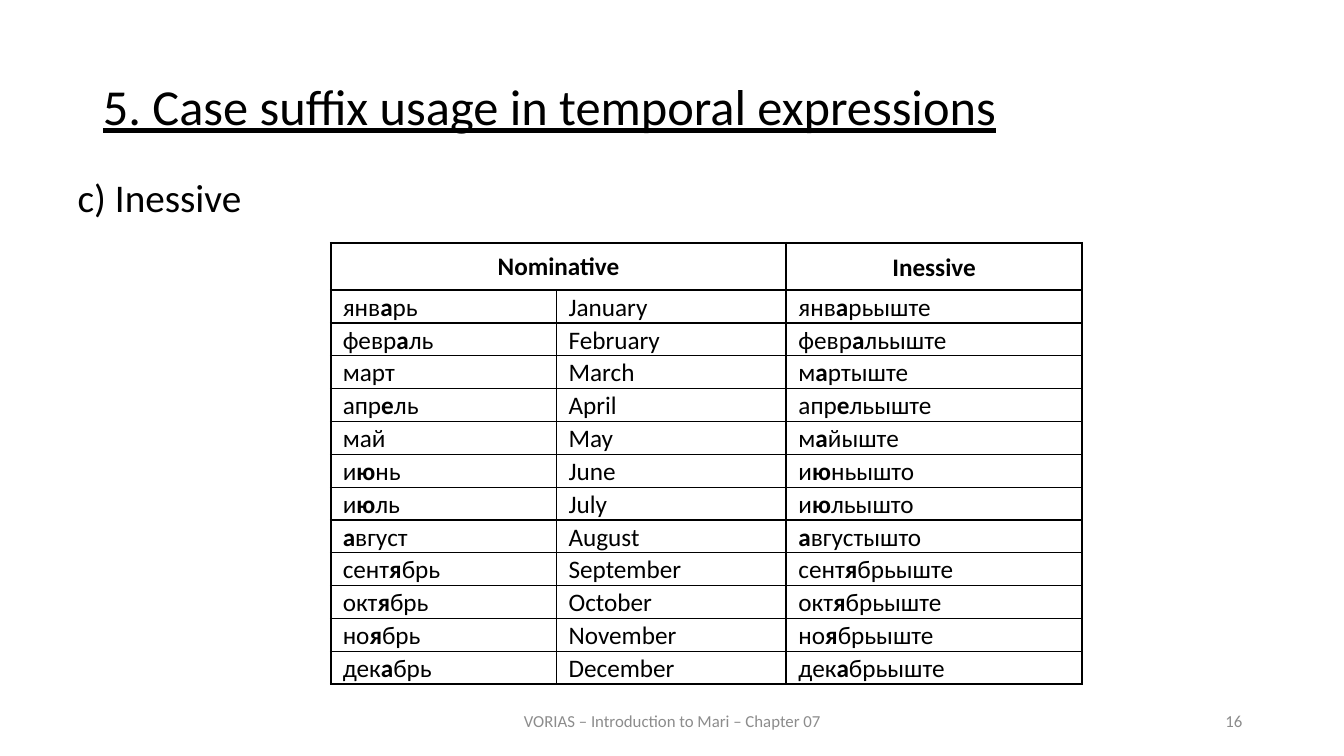
from lxml import etree
from pptx import Presentation
from pptx import util as u
from pptx.dml.color import RGBColor
from pptx.enum import text
from pptx.oxml.ns import qn

COLOURS = {"ink": "000000", "footer": "8C8C8C"}
FONT = "Calibri"
ALIGN = text.PP_ALIGN
MIDDLE = text.MSO_ANCHOR.MIDDLE
THICK, THIN = 1.5, 1
COLUMN_WIDTHS = (2.24, 2.28, 2.93)
HEADER_HEIGHT = 0.47
MONTHS = [
    ("янв*а*рь", "January", "янв*а*рьыште"),
    ("февр*а*ль", "February", "февр*а*льыште"),
    ("март", "March", "м*а*ртыште"),
    ("апр*е*ль", "April", "апр*е*льыште"),
    ("май", "May", "м*а*йыште"),
    ("и*ю*нь", "June", "и*ю*ньышто"),
    ("и*ю*ль", "July", "и*ю*льышто"),
    ("*а*вгуст", "August", "*а*вгустышто"),
    ("сент*я*брь", "September", "сент*я*брьыште"),
    ("окт*я*брь", "October", "окт*я*брьыште"),
    ("но*я*брь", "November", "но*я*брьыште"),
    ("дек*а*брь", "December", "дек*а*брьыште"),
]


def style(paragraph, size, colour="ink", align=ALIGN.LEFT):
    """Set the font and alignment of a whole paragraph."""
    paragraph.alignment = align
    paragraph.font.name = FONT
    paragraph.font.size = u.Pt(size)
    paragraph.font.color.rgb = RGBColor.from_string(COLOURS[colour])


def fill_placeholder(shape, box, wording, size, align=ALIGN.LEFT):
    """Move a placeholder to its box, write it and return its paragraph."""
    shape.left, shape.top, shape.width, shape.height = map(u.Inches, box)
    frame = shape.text_frame
    frame.text = wording
    frame.word_wrap = True
    frame.auto_size = text.MSO_AUTO_SIZE.NONE
    frame.vertical_anchor = text.MSO_ANCHOR.TOP
    paragraph = frame.paragraphs[0]
    style(paragraph, size, align=align)
    return paragraph


def add_title(slide, box):
    """Write the underlined slide title."""
    paragraph = fill_placeholder(
        slide.shapes.title, box,
        "5. Case suffix usage in temporal expressions", 36, ALIGN.JUSTIFY)
    paragraph.font.underline = True
    paragraph.line_spacing = 0.9
    paragraph.space_before = u.Pt(12)


def add_subheading(slide, box):
    """Write the case name as a body line without a bullet."""
    paragraph = fill_placeholder(slide.placeholders[1], box, "c) Inessive", 28)
    paragraph.space_before = u.Pt(0)
    properties = paragraph._p.get_or_add_pPr()
    properties.set("marL", "0")
    properties.set("indent", "0")
    etree.SubElement(properties, qn("a:buNone"))


def add_footer(slide, box, wording, align):
    """Write one grey footer item."""
    frame = slide.shapes.add_textbox(*map(u.Inches, box)).text_frame
    frame.word_wrap = True
    frame.vertical_anchor = MIDDLE
    frame.text = wording
    style(frame.paragraphs[0], 12, "footer", align)


def set_borders(cell, left, right, top, bottom):
    """Draw the four borders of a cell with the given widths in points."""
    properties = cell._tc.get_or_add_tcPr()
    widths = {"a:lnL": left, "a:lnR": right, "a:lnT": top, "a:lnB": bottom}
    for place, (tag, width) in enumerate(widths.items()):
        line = etree.Element(qn(tag), w=str(u.Pt(width)))
        fill = etree.SubElement(line, qn("a:solidFill"))
        etree.SubElement(fill, qn("a:srgbClr"), val=COLOURS["ink"])
        properties.insert(place, line)


def write_cell(cell, wording, align, margins=(0.12, 0.02, 0.12, 0)):
    """Write a cell, with the parts between asterisks in bold."""
    (cell.margin_left, cell.margin_top,
     cell.margin_right, cell.margin_bottom) = map(u.Inches, margins)
    cell.vertical_anchor = MIDDLE
    paragraph = cell.text_frame.paragraphs[0]
    style(paragraph, 18, align=align)
    for place, part in enumerate(wording.split("*")):
        if part:
            run = paragraph.add_run()
            run.text = part
            run.font.bold = place % 2 == 1


def add_month_table(slide, box):
    """Build the table of month names in both cases."""
    row_count = len(MONTHS) + 1
    table = slide.shapes.add_table(
        row_count, len(COLUMN_WIDTHS), *map(u.Inches, box)).table
    table.first_row = table.horz_banding = False
    for column, width in zip(table.columns, COLUMN_WIDTHS):
        column.width = u.Inches(width)
    row_height = (box[3] - HEADER_HEIGHT) / len(MONTHS)
    for index, row in enumerate(table.rows):
        row.height = u.Inches(row_height if index else HEADER_HEIGHT)
        for column, cell in enumerate(row.cells):
            cell.fill.background()
            set_borders(
                cell,
                THIN if column == 1 else THICK,
                THIN if column == 0 else THICK,
                THICK if index < 2 else THIN,
                THICK if index in (0, row_count - 1) else THIN)
            if index:
                write_cell(cell, MONTHS[index - 1][column], ALIGN.JUSTIFY)
    table.cell(0, 0).merge(table.cell(0, 1))
    write_cell(table.cell(0, 0), "*Nominative*", ALIGN.CENTER,
               (0.16, 0.08, 0.16, 0.08))
    write_cell(table.cell(0, 2), "*Inessive*", ALIGN.CENTER)


def main():
    """Build the slide and save it."""
    presentation = Presentation()
    presentation.slide_width = u.Inches(13.33)
    presentation.slide_height = u.Inches(7.5)
    slide = presentation.slides.add_slide(presentation.slide_layouts[1])
    add_title(slide, (0.92, 0.76, 11.5, 0.83))
    add_subheading(slide, (0.67, 1.67, 8.24, 0.57))
    add_month_table(slide, (3.28, 2.41, sum(COLUMN_WIDTHS), 4.38))
    add_footer(slide, (4.42, 6.95, 4.5, 0.4),
               "VORIAS – Introduction to Mari – Chapter 07", ALIGN.CENTER)
    add_footer(slide, (9.42, 6.95, 3, 0.4), "16", ALIGN.RIGHT)
    presentation.save("out.pptx")


if __name__ == "__main__":
    main()
